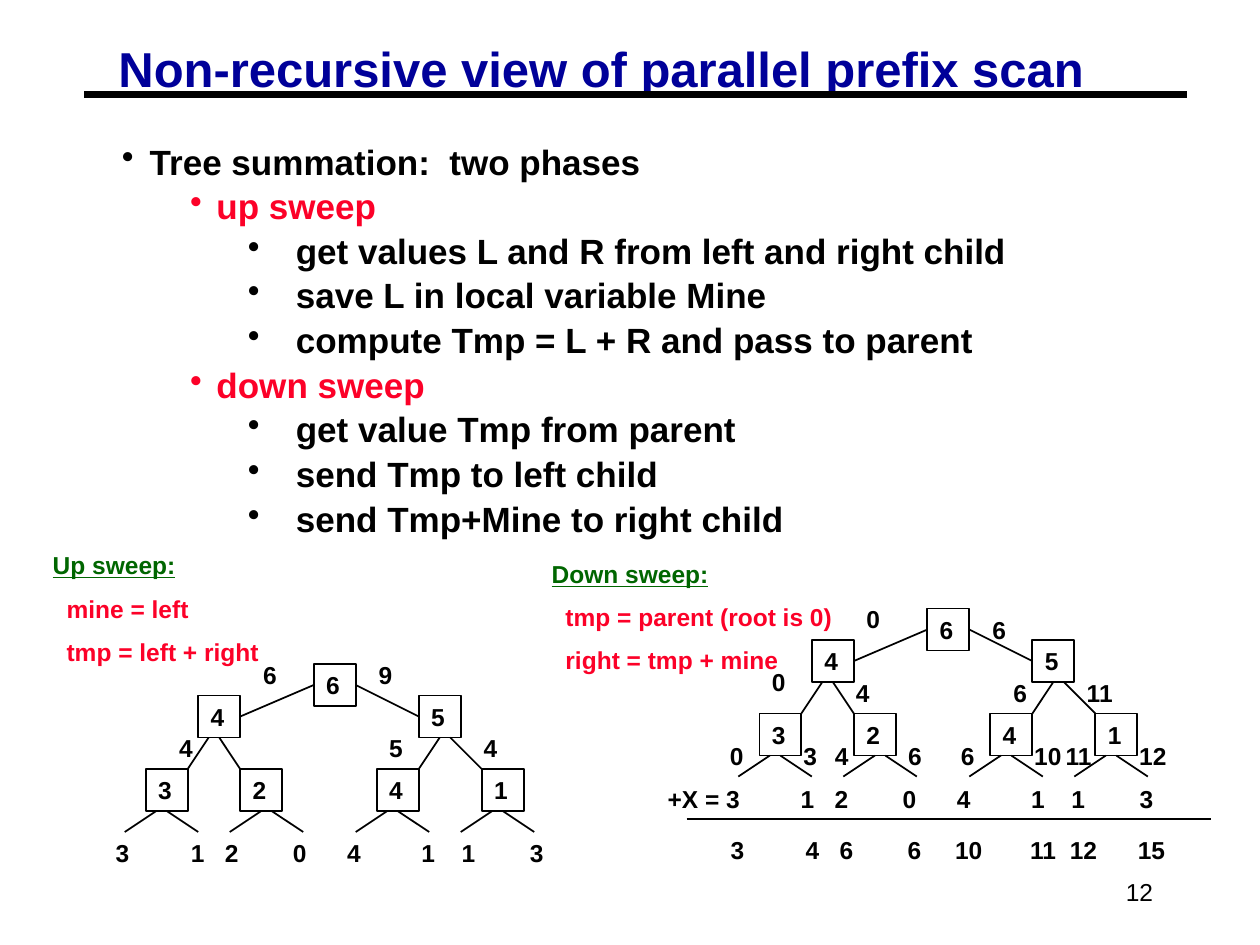
from dataclasses import dataclass

import lxml.etree
import pptx
import pptx.dml.color
import pptx.enum.shapes
import pptx.enum.text
import pptx.oxml.ns
import pptx.util

Inches = pptx.util.Inches
Pt = pptx.util.Pt
qn = pptx.oxml.ns.qn


@dataclass(frozen=True)
class Theme:
    font: str = "Arial"
    black: str = "000000"
    navy: str = "000099"
    red: str = "FC0128"
    green: str = "006600"
    title_size: int = 28
    body_size: int = 20
    label_size: int = 14
    rule_width: float = 3.75
    line_width: float = 1


THEME = Theme()
GRID = 1 / 12
NODE = 4 * GRID

OUTLINE = [
    (0, "Tree summation:  two phases"),
    (1, "up sweep"),
    (2, "get values L and R from left and right child"),
    (2, "save L in local variable Mine"),
    (2, "compute Tmp = L + R and pass to parent"),
    (1, "down sweep"),
    (2, "get value Tmp from parent"),
    (2, "send Tmp to left child"),
    (2, "send Tmp+Mine to right child"),
]
LEVELS = [
    (0.22, 0.22, THEME.black),
    (0.75, 0.21, THEME.red),
    (1.38, 0.38, THEME.black),
]

# Tree coordinates count grid steps from the top left corner of the root.
NODES = [("6", 0, 0), ("5", 10, 3), ("4", -11, 3),
         ("3", -16, 10), ("2", -7, 10), ("4", 6, 10), ("1", 16, 10)]
BRANCHES = [(-7, 5, 0, 2), (4, 2, 10, 5),
            (-10, 7, -12, 10), (-9, 7, -7, 10),
            (12, 7, 10, 10), (13, 7, 16, 10)]
LEAF_FORKS = [-15, -5, 7, 17]

UP_LABELS = [("6", -6, -1), ("9", 5, -1),
             ("4", -14, 6), ("5", 6, 6), ("4", 15, 6)]
DOWN_LABELS = [("0", -7, -1), ("6", 5, 0),
               ("0", -16, 5), ("4", -8, 6), ("6", 7, 6), ("11", 14, 6),
               ("0", -20, 12), ("3", -13, 12), ("4", -10, 12), ("6", -3, 12),
               ("6", 2, 12), ("10", 9, 12), ("11", 12, 12), ("12", 19, 12)]

COLUMN_STOPS = [0.65, 0.92, 1.46, 1.89, 2.48, 2.8, 3.34]
LEAVES = ["3", "1", "2", "0", "4", "1", "1", "3"]
SUMS = ["3", "4", "6", "6", "10", "11", "12", "15"]


def rgb(color):
    return pptx.dml.color.RGBColor.from_string(color)


def style(paragraph, size, color=THEME.black, bold=True):
    font = paragraph.font
    font.name, font.size, font.bold = THEME.font, Pt(size), bold
    font.color.rgb = rgb(color)
    paragraph.alignment = pptx.enum.text.PP_ALIGN.LEFT


def add_text(slide, lines, left, top, width, height):
    box = slide.shapes.add_textbox(
        Inches(left), Inches(top), Inches(width), Inches(height))
    frame = box.text_frame
    frame.word_wrap = True
    for index, line in enumerate(lines):
        paragraph = frame.paragraphs[0] if index == 0 else frame.add_paragraph()
        paragraph.text = line
        style(paragraph, THEME.label_size)
    return frame


def add_line(shapes, x1, y1, x2, y2, width=THEME.line_width):
    line = shapes.add_connector(
        pptx.enum.shapes.MSO_CONNECTOR.STRAIGHT,
        Inches(x1), Inches(y1), Inches(x2), Inches(y2))
    line.line.color.rgb = rgb(THEME.black)
    line.line.width = Pt(width)
    lxml.etree.SubElement(line._element.spPr, qn("a:effectLst"))


def add_title(slide, text):
    title = slide.shapes.title
    title.left, title.top = Inches(0.87), Inches(0.34)
    title.width, title.height = Inches(8.54), Inches(0.46)
    frame = title.text_frame
    frame.text = text
    frame.word_wrap = True
    frame.auto_size = pptx.enum.text.MSO_AUTO_SIZE.SHAPE_TO_FIT_TEXT
    frame.vertical_anchor = pptx.enum.text.MSO_ANCHOR.TOP
    frame.margin_left = frame.margin_right = Inches(0.07)
    frame.margin_top = frame.margin_bottom = Inches(0.03)
    style(frame.paragraphs[0], THEME.title_size, THEME.navy)
    frame.paragraphs[0].line_spacing = 0.87


def add_outline(slide):
    frame = add_text(slide, [text for _, text in OUTLINE], 0.87, 1.1, 8.57, 3.23)
    for index, (level, _) in enumerate(OUTLINE):
        paragraph = frame.paragraphs[index]
        indent, hanging, color = LEVELS[level]
        style(paragraph, THEME.body_size, color)
        paragraph.level = level
        paragraph.line_spacing = 0.9
        paragraph.space_before = Pt(3.9 if index else 0)
        properties = paragraph._p.get_or_add_pPr()
        properties.set("marL", str(Inches(indent)))
        properties.set("indent", str(-Inches(hanging)))
        bullet = lxml.etree.Element(qn("a:buChar"), char="•")
        properties.find(qn("a:defRPr")).addprevious(bullet)


def add_rules(slide, heading, rules, left, top):
    frame = add_text(slide, [heading, *rules], left, top, 3, 1.03)
    first, *others = frame.paragraphs
    first.font.color.rgb = rgb(THEME.green)
    first.font.underline = True
    for paragraph in others:
        paragraph.font.color.rgb = rgb(THEME.red)
        paragraph.space_before = Pt(7.8)
        paragraph._p.get_or_add_pPr().set("marL", str(Inches(0.11)))


def add_node(slide, value, left, top):
    node = slide.shapes.add_shape(
        pptx.enum.shapes.MSO_SHAPE.RECTANGLE,
        Inches(left), Inches(top), Inches(NODE), Inches(NODE))
    node.shadow.inherit = False
    node.fill.background()
    node.line.color.rgb = rgb(THEME.black)
    node.line.width = Pt(THEME.line_width)
    frame = node.text_frame
    frame.text = value
    frame.vertical_anchor = pptx.enum.text.MSO_ANCHOR.TOP
    style(frame.paragraphs[0], THEME.label_size)


def add_tree(slide, left, top, labels):
    def place(x, y):
        return left + x * GRID, top + y * GRID

    def branch(shapes, x1, y1, x2, y2):
        add_line(shapes, *place(x1, y1), *place(x2, y2))

    for value, x, y in NODES:
        add_node(slide, value, *place(x, y))
    for ends in BRANCHES:
        branch(slide.shapes, *ends)
    for x in LEAF_FORKS:
        fork = slide.shapes.add_group_shape().shapes
        branch(fork, x, 14, x - 3, 16)
        branch(fork, x + 1, 14, x + 4, 16)
    for value, x, y in labels:
        add_text(slide, [value], *place(x, y), NODE if len(value) == 1 else 0.5, NODE)


def add_value_row(slide, values, left, top, width, shift=0):
    frame = add_text(slide, ["\t".join(values)], left, top, width, NODE)
    properties = frame.paragraphs[0]._p.get_or_add_pPr()
    stops = lxml.etree.Element(qn("a:tabLst"))
    for stop in COLUMN_STOPS:
        lxml.etree.SubElement(
            stops, qn("a:tab"), pos=str(Inches(stop + shift)), algn="ctr")
    properties.find(qn("a:defRPr")).addprevious(stops)


def main():
    deck = pptx.Presentation()
    deck.slide_width, deck.slide_height = Inches(10), Inches(7.5)
    slide = deck.slides.add_slide(deck.slide_layouts.get_by_name("Title Only"))

    add_line(slide.shapes, 0.67, 0.75, 9.42, 0.75, THEME.rule_width)
    add_title(slide, "Non-recursive view of parallel prefix scan")
    add_outline(slide)

    add_tree(slide, 2.49, 5.27, UP_LABELS)
    add_rules(slide, "Up sweep:", ["mine = left", "tmp = left + right"], 0.32, 4.32)
    add_value_row(slide, LEAVES, 0.82, 6.6, 3.75)

    add_tree(slide, 7.36, 4.83, DOWN_LABELS)
    add_rules(slide, "Down sweep:",
              ["tmp = parent (root is 0)", "right = tmp + mine"], 4.28, 4.39)
    add_value_row(slide, ["+X = 3", *LEAVES[1:]], 5.2, 6.17, 4.33, shift=0.46)
    add_line(slide.shapes, 5.45, 6.5, 9.61, 6.5)
    add_value_row(slide, SUMS, 5.7, 6.58, 3.75)

    page = add_text(slide, ["12"], 7.17, 6.83, 2.08, 0.5)
    page.vertical_anchor = pptx.enum.text.MSO_ANCHOR.MIDDLE
    style(page.paragraphs[0], THEME.label_size, bold=False)
    page.paragraphs[0].alignment = pptx.enum.text.PP_ALIGN.RIGHT

    deck.save("out.pptx")


if __name__ == "__main__":
    main()
